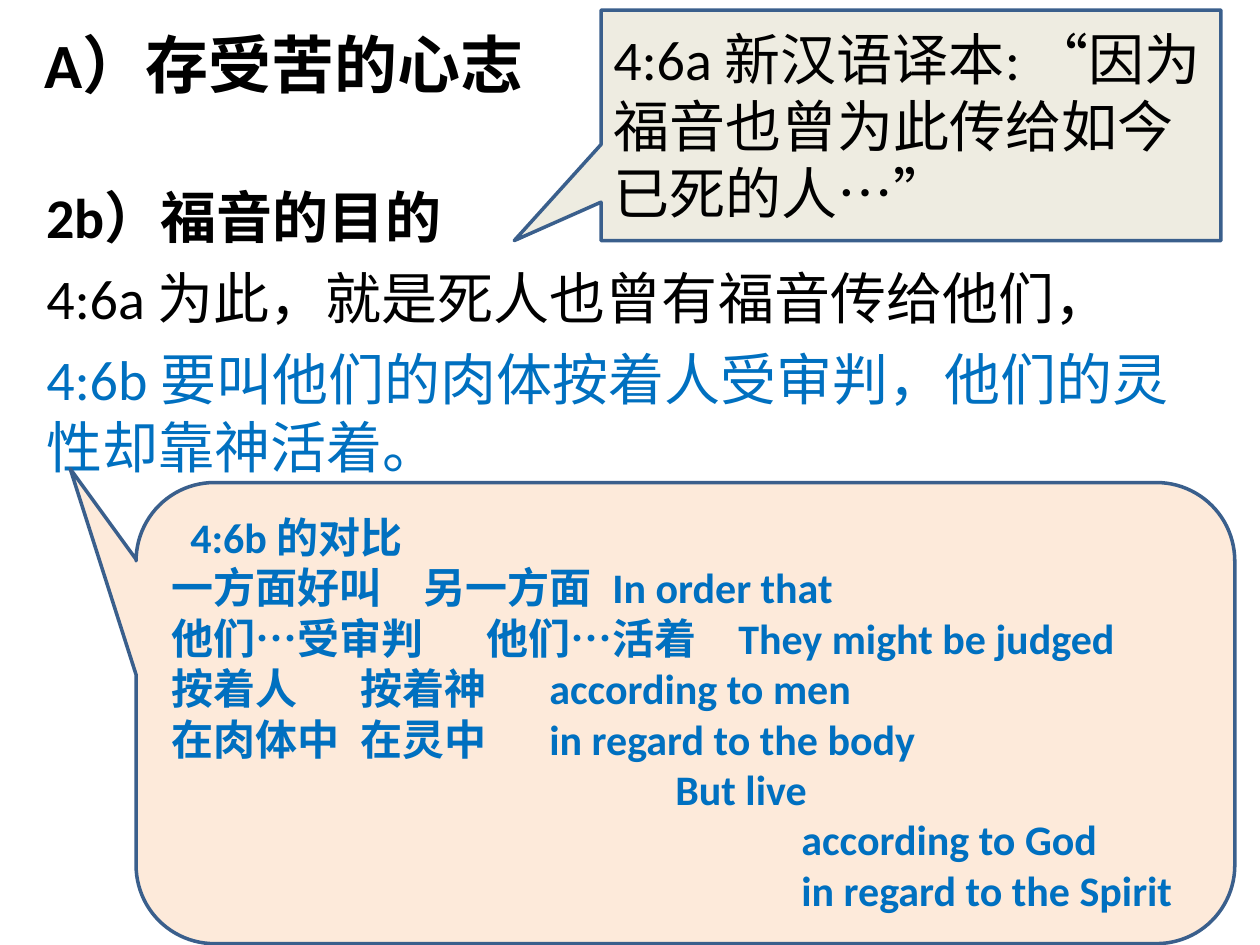
from pptx import Presentation
from pptx.dml.color import RGBColor as RGB
from pptx.enum.shapes import MSO_SHAPE as Shape
from pptx.enum.text import MSO_ANCHOR as Anchor, PP_ALIGN as Align
from pptx.oxml.ns import qn
from pptx.util import Inches, Pt
from lxml.etree import SubElement

BLACK = RGB(0x00, 0x00, 0x00)
BLUE = RGB(0x00, 0x70, 0xC0)
EDGE = RGB(0x3A, 0x5F, 0x8C)
CREAM = RGB(0xEE, 0xEC, 0xE1)
PEACH = RGB(0xFD, 0xEA, 0xDA)


def write(par, text, size=32, color=BLACK, bold=False, before=0, left=0, stops=()):
    """Write one paragraph with its format."""
    par.alignment = Align.LEFT
    par.space_before = Pt(before)
    props = par._p.get_or_add_pPr()
    props.set("marL", str(Inches(left)))
    props.set("indent", "0")
    if stops:
        tabs = SubElement(props, qn("a:tabLst"))
        for stop in stops:
            SubElement(tabs, qn("a:tab"), pos=str(Inches(stop)), algn="l")
    run = par.add_run()
    run.text = text
    font = run.font
    font.name = "Calibri"
    font.size = Pt(size)
    font.bold = bold
    font.color.rgb = color


class Page:
    """Hold the style and the current slide."""

    def __init__(self, deck):
        self.slide = deck.slides.add_slide(deck.slide_layouts[5])
        self.edge = EDGE
        self.width = Pt(2)

    def fill(self, frame, rows, anchor, **style):
        """Fill a text frame with rows of text and format."""
        frame.word_wrap = True
        frame.vertical_anchor = anchor
        for i, (text, extra) in enumerate(rows):
            par = frame.add_paragraph() if i else frame.paragraphs[0]
            write(par, text, **{**style, **extra})

    def title(self, text, box):
        """Place the title."""
        head = self.slide.shapes.title
        head.left, head.top, head.width, head.height = map(Inches, box)
        self.fill(head.text_frame, [(text, {})], Anchor.MIDDLE, size=36, bold=True)

    def verses(self, rows, box):
        """Add the verse text."""
        area = self.slide.shapes.add_textbox(*map(Inches, box))
        self.fill(area.text_frame, rows, Anchor.TOP, before=8)

    def callout(self, kind, rows, box, adjust, back, **style):
        """Add a callout with its pointer."""
        shape = self.slide.shapes.add_shape(kind, *map(Inches, box))
        for i, value in enumerate(adjust):
            shape.adjustments[i] = value
        shape.shadow.inherit = False
        shape.fill.solid()
        shape.fill.fore_color.rgb = back
        shape.line.color.rgb = self.edge
        shape.line.width = self.width
        self.fill(shape.text_frame, rows, Anchor.MIDDLE, **style)


def main():
    """Build the slide and save it."""
    deck = Presentation()
    deck.slide_width, deck.slide_height = Inches(10), Inches(7.5)
    page = Page(deck)
    page.title("A）存受苦的心志", (0.25, 0.01, 9.75, 0.99))
    page.verses([
        ("2b）福音的目的", {"bold": True}),
        ("4:6a 为此，就是死人也曾有福音传给他们，", {}),
        ("4:6b 要叫他们的肉体按着人受审判，他们的灵性却靠神活着。", {"color": BLUE}),
    ], (0.27, 1.4, 9.42, 2.33))
    page.callout(
        Shape.RECTANGULAR_CALLOUT,
        [("4:6a 新汉语译本: “因为福音也曾为此传给如今已死的人…”", {})],
        (4.77, 0.08, 4.92, 1.83), (-0.64, 0.5), CREAM)
    near = {"stops": (2.15, 5)}
    page.callout(Shape.ROUNDED_RECTANGULAR_CALLOUT, [
        ("4:6b 的对比", {"left": 0.15}),
        ("一方面好叫\t另一方面\tIn order that", {"stops": (2.15, 4)}),
        ("他们…受审判\t他们…活着\tThey might be judged", {"stops": (3.15, 5)}),
        ("按着人\t按着神\taccording to men", near),
        ("在肉体中\t在灵中\tin regard to the body", near),
        ("But live", {"left": 4}),
        ("according to God", {"left": 5}),
        ("in regard to the Spirit", {"left": 5}),
    ], (1.08, 3.83, 8.72, 3.66), (-0.56, -0.53, 0.17), PEACH,
        size=24, color=BLUE, bold=True)
    deck.save("out.pptx")


if __name__ == "__main__":
    main()
